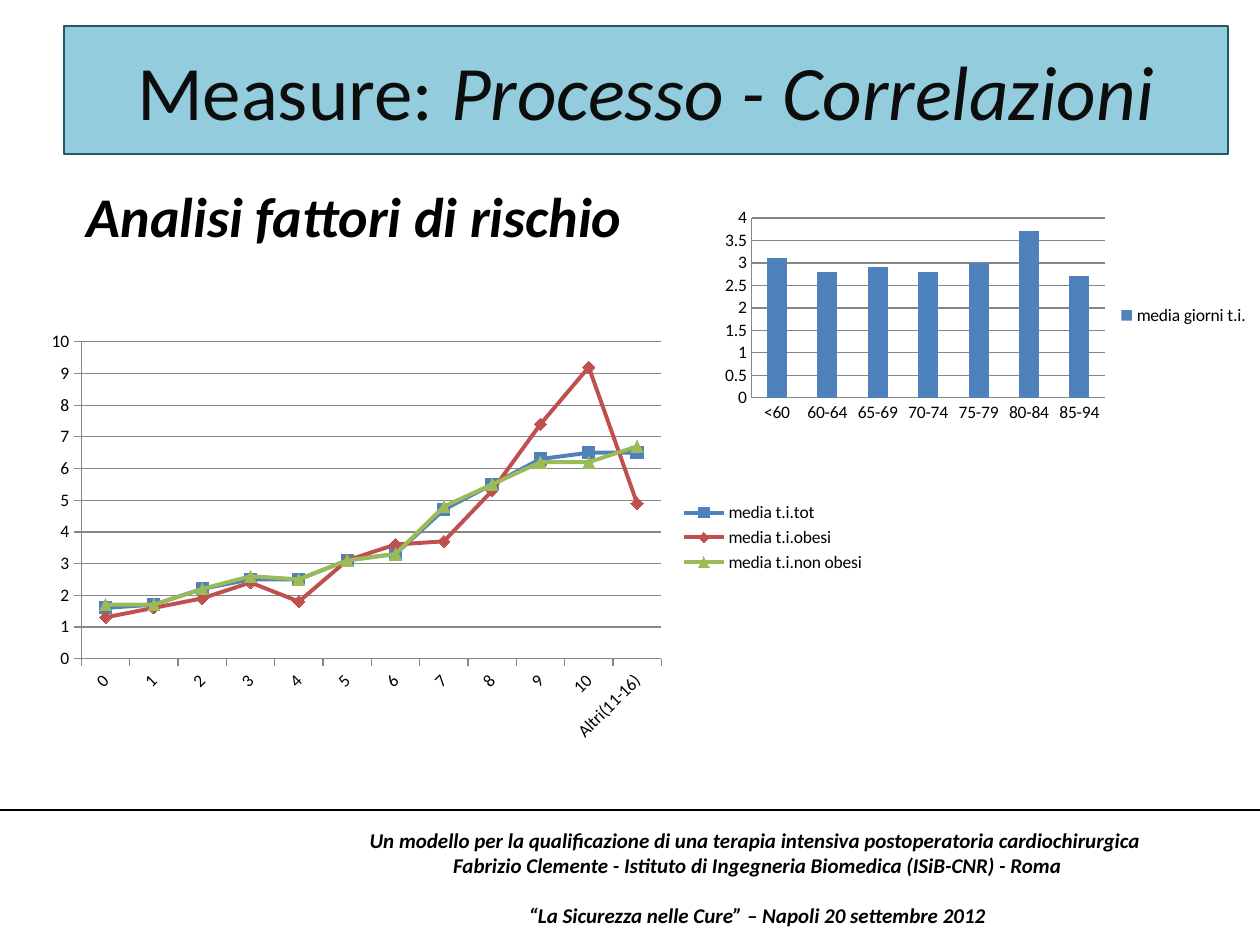
from lxml import etree
from pptx import Presentation
from pptx import util as u
from pptx.chart.data import CategoryChartData
from pptx.dml.color import RGBColor
from pptx.enum import chart as ch, shapes, text
from pptx.oxml import parse_xml
from pptx.oxml.ns import nsdecls, qn

COLORS = {
    "black": "000000", "ink": "0D0D0D", "grid": "868686",
    "banner": "93CDDD", "banner_edge": "215968",
    "blue": "4F81BD", "red": "C0504D", "green": "9BBB59",
}


def px(n):
    return u.Emu(round(n * 914400 / 126))


def rgb(name):
    return RGBColor.from_string(COLORS[name])


class Deck:
    font = "Calibri"

    def __init__(self):
        self.prs = Presentation()
        self.prs.slide_width, self.prs.slide_height = px(1260), px(945)
        self.slide = self.prs.slides.add_slide(self.prs.slide_layouts[1])

    def style(self, font, size, color="black", bold=None, italic=None):
        font.name, font.size = self.font, u.Pt(size)
        font.bold, font.italic = bold, italic
        font.color.rgb = rgb(color)

    def place(self, shape, box):
        shape.left, shape.top, shape.width, shape.height = map(px, box)

    def title(self, box, parts):
        banner = self.slide.shapes.title
        self.place(banner, box)
        banner.fill.solid()
        banner.fill.fore_color.rgb = rgb("banner")
        banner.line.color.rgb = rgb("banner_edge")
        banner.line.width = u.Pt(0.75)
        banner.text_frame.vertical_anchor = text.MSO_ANCHOR.MIDDLE
        heading = banner.text_frame.paragraphs[0]
        heading.alignment = text.PP_ALIGN.CENTER
        self.style(heading.font, 44, "ink")
        for words, italic in parts:
            run = heading.add_run()
            run.text = words
            self.style(run.font, 44, "ink", italic=italic)

    def body(self, box, words):
        body = self.slide.placeholders[1]
        self.place(body, box)
        heading = body.text_frame.paragraphs[0]
        heading.text = words
        heading.space_before = u.Pt(0)
        props = heading._p.get_or_add_pPr()
        props.set("marL", "0")
        props.set("indent", "0")
        etree.SubElement(props, qn("a:buNone"))
        self.style(heading.font, 32, bold=True, italic=True)

    def rule(self, x1, y1, x2, y2):
        line = self.slide.shapes.add_connector(
            shapes.MSO_CONNECTOR.STRAIGHT, px(x1), px(y1), px(x2), px(y2))
        line.line.color.rgb = rgb("black")
        line.line.width = u.Pt(0.75)
        etree.SubElement(line._element.spPr, qn("a:effectLst"))

    def footer(self, box, lines):
        frame = self.slide.shapes.add_textbox(*map(px, box)).text_frame
        frame.word_wrap = True
        frame.vertical_anchor = text.MSO_ANCHOR.MIDDLE
        for i, (words, gap) in enumerate(lines):
            para = frame.add_paragraph() if i else frame.paragraphs[0]
            para.text = words
            para.alignment = text.PP_ALIGN.CENTER
            para.space_before = u.Pt(gap)
            self.style(para.font, 12, bold=True, italic=True)

    def chart(self, kind, box, plot_area, categories, series, step, top, ticks):
        data = CategoryChartData(number_format="General")
        data.categories = categories
        for name, values, _ in series:
            data.add_series(name, values)
        chart = self.slide.shapes.add_chart(kind, *map(px, box), data).chart
        chart.has_title = False
        self.style(chart.font, 10)
        chart.has_legend = True
        chart.legend.position = ch.XL_LEGEND_POSITION.RIGHT
        chart.legend.include_in_layout = False
        chart.plots[0].vary_by_categories = False

        # Axes
        values_axis = chart.value_axis
        values_axis.minimum_scale, values_axis.maximum_scale = 0, top
        values_axis.major_unit = step
        values_axis.major_gridlines.format.line.color.rgb = rgb("grid")
        for axis in (chart.category_axis, values_axis):
            axis.major_tick_mark = ticks
            axis.format.line.color.rgb = rgb("grid")

        # Inner plot area, as fractions of the chart
        left, upper, width, height = plot_area
        fractions = {"x": (left - box[0]) / box[2], "y": (upper - box[1]) / box[3],
                     "w": width / box[2], "h": height / box[3]}
        sizes = "".join(f'<c:{k} val="{v:.3f}"/>' for k, v in fractions.items())
        layout = parse_xml(
            f'<c:layout {nsdecls("c")}><c:manualLayout><c:layoutTarget val="inner"/>'
            f'<c:xMode val="edge"/><c:yMode val="edge"/>{sizes}'
            '</c:manualLayout></c:layout>')
        area = chart._chartSpace.chart.plotArea
        for old in area.findall(qn("c:layout")):
            area.remove(old)
        area.insert(0, layout)
        return chart

    def column_chart(self, box, plot_area, categories, series, step, top):
        chart = self.chart(ch.XL_CHART_TYPE.COLUMN_CLUSTERED, box, plot_area,
                           categories, series, step, top, ch.XL_TICK_MARK.NONE)
        chart.plots[0].gap_width = 150
        for bars, (_, _, color) in zip(chart.plots[0].series, series):
            bars.format.fill.solid()
            bars.format.fill.fore_color.rgb = rgb(color)

    def line_chart(self, box, plot_area, categories, series, step, top):
        chart = self.chart(ch.XL_CHART_TYPE.LINE_MARKERS, box, plot_area,
                           categories, series, step, top, ch.XL_TICK_MARK.OUTSIDE)
        self.style(chart.category_axis.tick_labels.font, 10)
        label_body = chart.category_axis._element.find(qn("c:txPr")).find(qn("a:bodyPr"))
        label_body.set("rot", "-2700000")
        markers = (ch.XL_MARKER_STYLE.SQUARE, ch.XL_MARKER_STYLE.DIAMOND,
                   ch.XL_MARKER_STYLE.TRIANGLE)
        for curve, (_, _, color), marker in zip(chart.plots[0].series, series, markers):
            curve.smooth = False
            curve.format.line.color.rgb = rgb(color)
            curve.format.line.width = u.Pt(2.25)
            curve.marker.style, curve.marker.size = marker, 7
            curve.marker.format.fill.solid()
            curve.marker.format.fill.fore_color.rgb = rgb(color)
            curve.marker.format.line.color.rgb = rgb(color)


def main():
    deck = Deck()

    # Headings
    deck.title((64, 26, 1164, 128),
               [("Measure: ", False), ("Processo - Correlazioni", True)])
    deck.body((74, 175, 1033, 661), "Analisi fattori di rischio")

    # Mean days in intensive care by age
    deck.column_chart(
        (714, 204, 548, 223), (752, 218, 353, 180),
        ["<60", "60-64", "65-69", "70-74", "75-79", "80-84", "85-94"],
        [("media giorni t.i.", (3.1, 2.8, 2.9, 2.8, 3, 3.7, 2.7), "blue")],
        step=0.5, top=4)

    # Mean stay by risk score
    deck.line_chart(
        (35, 324, 843, 427), (81, 342, 580, 317),
        [str(score) for score in range(11)] + ["Altri(11-16)"],
        [("media t.i.tot",
          (1.6, 1.7, 2.2, 2.5, 2.5, 3.1, 3.3, 4.7, 5.5, 6.3, 6.5, 6.5), "blue"),
         ("media t.i.obesi",
          (1.3, 1.6, 1.9, 2.4, 1.8, 3.1, 3.6, 3.7, 5.3, 7.4, 9.2, 4.9), "red"),
         ("media t.i.non obesi",
          (1.7, 1.7, 2.2, 2.6, 2.5, 3.1, 3.3, 4.8, 5.5, 6.2, 6.2, 6.7), "green")],
        step=1, top=10)

    # Footer
    deck.rule(0, 810, 1260, 810)
    deck.footer((343, 810, 829, 135), [
        ("Un modello per la qualificazione di una terapia intensiva "
         "postoperatoria cardiochirurgica ", 0),
        ("Fabrizio Clemente - Istituto di Ingegneria Biomedica (ISiB-CNR) - Roma", 0),
        ("“La Sicurezza nelle Cure” – Napoli 20 settembre 2012", 14.4),
    ])

    deck.prs.save("out.pptx")


if __name__ == "__main__":
    main()
